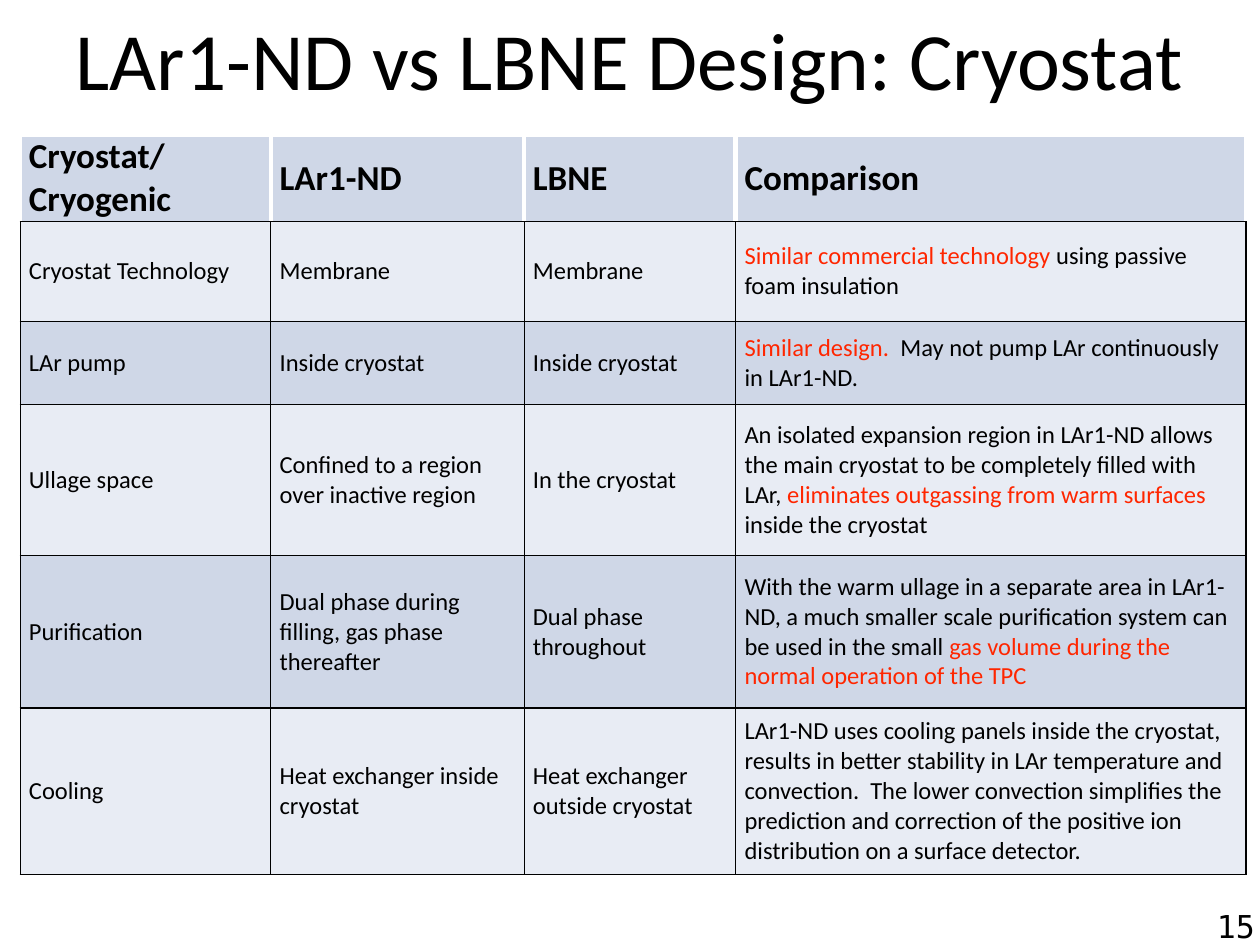
from dataclasses import dataclass

from lxml import etree
from pptx import Presentation
from pptx.dml.color import RGBColor as Rgb
from pptx.enum.text import MSO_ANCHOR as Anchor, MSO_AUTO_SIZE as Fit
from pptx.enum.text import PP_ALIGN as Align
from pptx.oxml.ns import qn
from pptx.util import Inches, Pt


@dataclass(frozen=True)
class Theme:
    font: str = "Calibri"
    mono: str = "DejaVu Sans Mono"
    ink: str = "000000"
    red: str = "FF2600"
    white: str = "FFFFFF"
    dark: str = "CFD7E7"
    light: str = "E8ECF4"
    title: float = 46.5
    head: float = 20
    body: float = 14
    page: float = 18
    thin: float = 0.75
    thick: float = 3


theme = Theme()

# Text between asterisks is red.
rows = [
    ["Cryostat/Cryogenic", "LAr1-ND", "LBNE", "Comparison"],
    ["Cryostat Technology", "Membrane", "Membrane",
     "*Similar commercial technology* using passive foam insulation"],
    ["LAr pump", "Inside cryostat", "Inside cryostat",
     "*Similar design.*  May not pump LAr continuously in LAr1-ND."],
    ["Ullage space", "Confined to a region over inactive region",
     "In the cryostat",
     "An isolated expansion region in LAr1-ND allows the main cryostat to be "
     "completely filled with LAr, *eliminates outgassing from warm surfaces* "
     "inside the cryostat"],
    ["Purification", "Dual phase during filling, gas phase thereafter",
     "Dual phase throughout",
     "With the warm ullage in a separate area in LAr1-ND, a much smaller scale "
     "purification system can be used in the small *gas volume during the "
     "normal operation of the TPC*"],
    ["Cooling", "Heat exchanger inside cryostat",
     "Heat exchanger outside cryostat",
     "LAr1-ND uses cooling panels inside the cryostat, results in better "
     "stability in LAr temperature and convection.  The lower convection "
     "simplifies the prediction and correction of the positive ion "
     "distribution on a surface detector."],
]
widths = [1.99, 2.01, 1.68, 4.05]
heights = [0.69, 0.79, 0.66, 1.2, 1.21, 1.32]


def style(run, size, color=theme.ink, face=theme.font, bold=False):
    font = run.font
    font.name, font.size, font.bold = face, Pt(size), bold
    font.color.rgb = Rgb.from_string(color)


def border(cell, side, color, width):
    line = etree.SubElement(cell._tc.get_or_add_tcPr(), qn(f"a:ln{side}"),
                            w=str(Pt(width)))
    fill = etree.SubElement(line, qn("a:solidFill"))
    etree.SubElement(fill, qn("a:srgbClr"), val=color)


deck = Presentation()
deck.slide_width, deck.slide_height = Inches(10), Inches(7.5)
slide = deck.slides.add_slide(deck.slide_layouts[6])

# Title and page number; the number needs the room of its left margin
labels = [
    ("LAr1-ND vs LBNE Design: Cryostat", (0.08, 0.01, 9.83, 0.9), 0, True,
     Fit.NONE, Align.CENTER, theme.title, theme.font),
    ("15", (9.64, 7.14, 0.37, 0.41), 0.05, False,
     Fit.SHAPE_TO_FIT_TEXT, Align.RIGHT, theme.page, theme.mono),
]
for text, place, pad, wrap, fit, align, size, face in labels:
    frame = slide.shapes.add_textbox(*map(Inches, place)).text_frame
    frame.margin_left, frame.margin_right = 0, Inches(pad)
    frame.margin_top = frame.margin_bottom = Inches(pad)
    frame.vertical_anchor, frame.word_wrap = Anchor.MIDDLE, wrap
    frame.auto_size = fit
    frame.text = text
    para = frame.paragraphs[0]
    para.alignment = align
    style(para.runs[0], size, face=face)

# Comparison table
table = slide.shapes.add_table(
    len(rows), len(widths), Inches(0.16), Inches(1.07),
    Inches(sum(widths)), Inches(sum(heights))).table
for col, width in zip(table.columns, widths):
    col.width = Inches(width)
for row, height in zip(table.rows, heights):
    row.height = Inches(height)

for r, row in enumerate(rows):
    head = r == 0
    for c, text in enumerate(row):
        cell = table.cell(r, c)
        cell.margin_left = cell.margin_right = Inches(0.07)
        cell.margin_top = cell.margin_bottom = 0
        cell.vertical_anchor = Anchor.MIDDLE
        for side in "LRTB":
            if head and side != "B":
                border(cell, side, theme.white, theme.thick)
            else:
                border(cell, side, theme.ink, theme.thin)
        cell.fill.solid()
        shade = theme.light if r % 2 else theme.dark
        cell.fill.fore_color.rgb = Rgb.from_string(shade)
        para = cell.text_frame.paragraphs[0]
        for i, part in enumerate(text.split("*")):
            if part:
                run = para.add_run()
                run.text = part
                style(run, theme.head if head else theme.body,
                      theme.red if i % 2 else theme.ink, bold=head)

deck.save("out.pptx")
